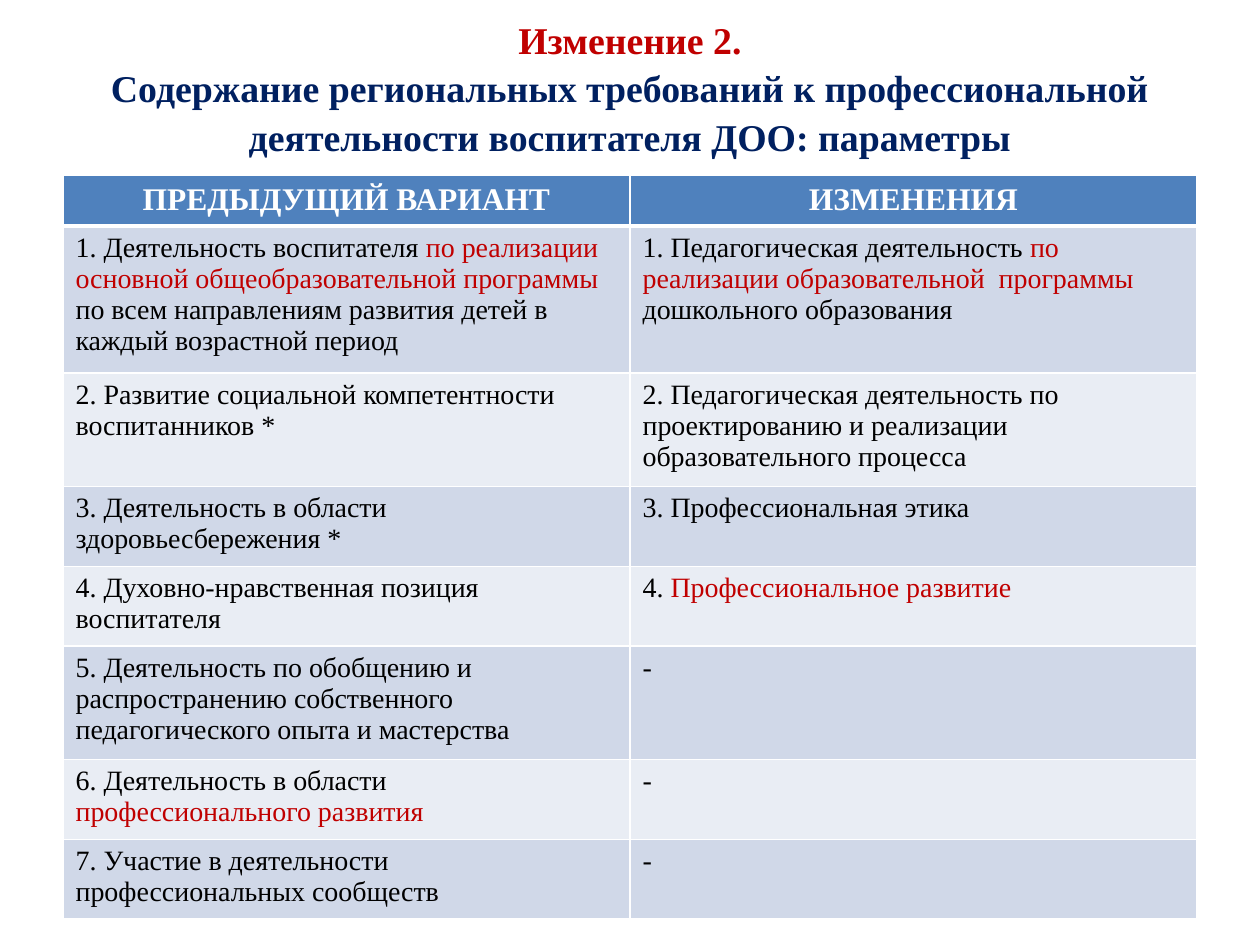
import pptx
import pptx.util
import pptx.dml.color
import pptx.enum.text
import lxml.etree

Pt = pptx.util.Pt
CENTER = pptx.enum.text.PP_ALIGN.CENTER
NAVY, RED, BLUE, WHITE, BLACK = "002060", "C00000", "4F81BD", "FFFFFF", "000000"
BANDS = ["D0D8E8", "E9EDF4"]
HEADS = ["ПРЕДЫДУЩИЙ ВАРИАНТ", "ИЗМЕНЕНИЯ"]
ROWS = [
    ("1. Деятельность воспитателя |по реализации основной общеобразовательной программы |"
     "по всем направлениям развития детей в каждый возрастной период",
     "1. Педагогическая деятельность |по реализации образовательной  программы |"
     "дошкольного образования"),
    ("2. Развитие социальной компетентности воспитанников *",
     "2. Педагогическая деятельность по проектированию и реализации образовательного процесса"),
    ("3. Деятельность в области здоровьесбережения *", "3. Профессиональная этика"),
    ("4. Духовно-нравственная позиция воспитателя", "4. |Профессиональное развитие"),
    ("5. Деятельность по обобщению и распространению собственного "
     "педагогического опыта и мастерства", "-"),
    ("6. Деятельность в области |профессионального развития", "-"),
    ("7. Участие в деятельности профессиональных сообществ", "-"),
]
LINES = [4, 3, 2, 2, 3, 2, 2]


def paint(part, color):
    if hasattr(part, "solid"):
        part.solid()
        part = part.fore_color
    part.rgb = pptx.dml.color.RGBColor.from_string(color)


def style(para, size, bold):
    para.font.name = "Times New Roman"
    para.font.size = Pt(size)
    para.font.bold = bold


def write(para, text, color):
    run = para.add_run()
    run.text = text
    paint(run.font.color, color)


def border(cell, foot):
    props = cell._tc.get_or_add_tcPr()
    for place, (side, width) in enumerate([("L", 1), ("R", 1), ("T", 1), ("B", foot)]):
        line = lxml.etree.fromstring(
            '<a:ln%s xmlns:a="http://schemas.openxmlformats.org/drawingml/2006/main" w="%d">'
            '<a:solidFill><a:srgbClr val="%s"/></a:solidFill></a:ln%s>'
            % (side, Pt(width), WHITE, side))
        props.insert(place, line)


def add_title(slide, left, top, width, height):
    frame = slide.shapes.add_textbox(Pt(left), Pt(top), Pt(width), Pt(height)).text_frame
    frame.word_wrap = True
    frame.vertical_anchor = pptx.enum.text.MSO_ANCHOR.MIDDLE
    para = frame.paragraphs[0]
    para.alignment = CENTER
    para.line_spacing = 1.07
    style(para, 21.6, True)
    write(para, "Изменение 2.", RED)
    para.add_line_break()
    write(para, "Содержание региональных требований к профессиональной "
                "деятельности воспитателя ДОО: параметры", NAVY)


def fill_cell(cell, text, head, back):
    paint(cell.fill, back)
    border(cell, 3 if head else 1)
    para = cell.text_frame.paragraphs[0]
    style(para, 18 if head else 16, head)
    if head:
        para.alignment = CENTER
    colors = [WHITE] if head else [BLACK, RED]
    for i, part in enumerate(text.split("|")):
        write(para, part, colors[i % len(colors)])


def add_grid(slide, left, top, width):
    tall = [28.5] + [7.2 + 17.75 * n for n in LINES]
    table = slide.shapes.add_table(len(tall), 2, Pt(left), Pt(top),
                                   Pt(width), Pt(sum(tall))).table
    for col in table.columns:
        col.width = Pt(width / 2)
    for r, texts in enumerate([HEADS] + ROWS):
        table.rows[r].height = Pt(tall[r])
        back = BANDS[(r - 1) % 2] if r else BLUE
        for c, text in enumerate(texts):
            fill_cell(table.cell(r, c), text, r == 0, back)


def main():
    deck = pptx.Presentation()
    deck.slide_width, deck.slide_height = Pt(720), Pt(540)
    slide = deck.slides.add_slide(deck.slide_layouts[6])
    add_title(slide, 36, 21.6, 648, 55.4)
    add_grid(slide, 36, 100.4, 648)
    deck.save("out.pptx")


if __name__ == "__main__":
    main()
